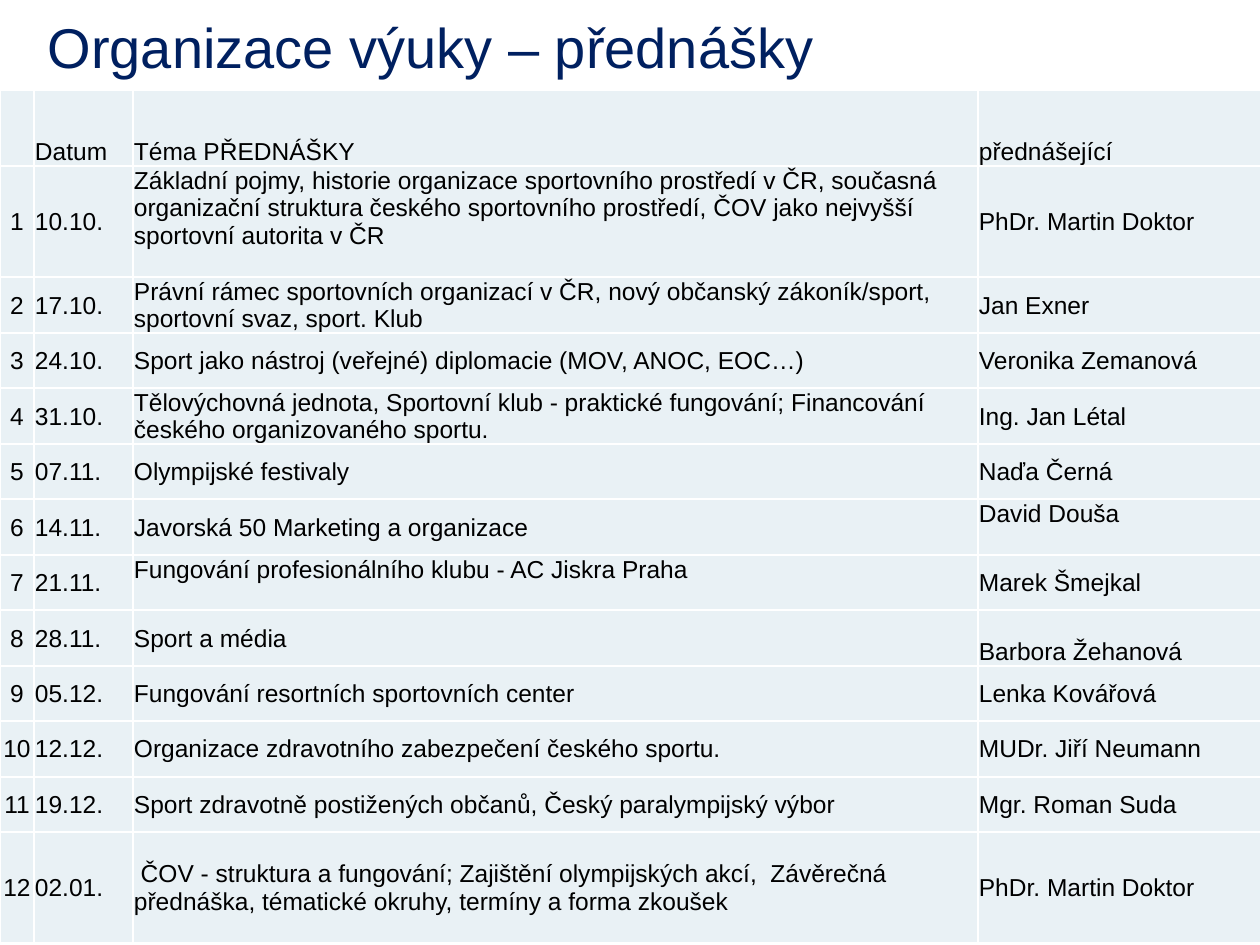
import pptx
import pptx.dml.color
import pptx.enum.text
import pptx.oxml
import pptx.oxml.ns
import pptx.util

PX = 914400 // 126
ANCHOR = pptx.enum.text.MSO_ANCHOR
ALIGN = pptx.enum.text.PP_ALIGN

HEADINGS = ["", "Datum", "Téma PŘEDNÁŠKY", "přednášející"]
LECTURES = [
    ("10.10.", "Základní pojmy, historie organizace sportovního prostředí v ČR, současná "
     "organizační struktura českého sportovního prostředí, ČOV jako nejvyšší "
     "sportovní autorita v ČR", "PhDr. Martin Doktor"),
    ("17.10.", "Právní rámec sportovních organizací v ČR, nový občanský zákoník/sport, "
     "sportovní svaz, sport. Klub", "Jan Exner"),
    ("24.10.", "Sport jako nástroj (veřejné) diplomacie (MOV, ANOC, EOC…)", "Veronika Zemanová"),
    ("31.10.", "Tělovýchovná jednota, Sportovní klub - praktické fungování; Financování "
     "českého organizovaného sportu.", "Ing. Jan Létal"),
    ("07.11.", "Olympijské festivaly", "Naďa Černá"),
    ("14.11.", "Javorská 50 Marketing a organizace", "David Douša"),
    ("21.11.", "Fungování profesionálního klubu - AC Jiskra Praha", "Marek Šmejkal"),
    ("28.11.", "Sport a média", "Barbora Žehanová"),
    ("05.12.", "Fungování resortních sportovních center", "Lenka Kovářová"),
    ("12.12.", "Organizace zdravotního zabezpečení českého sportu.", "MUDr. Jiří Neumann"),
    ("19.12.", "Sport zdravotně postižených občanů, Český paralympijský výbor",
     "Mgr. Roman Suda"),
    ("02.01.", " ČOV - struktura a fungování; Zajištění olympijských akcí,  Závěrečná "
     "přednáška, tématické okruhy, termíny a forma zkoušek", "PhDr. Martin Doktor"),
]
COLUMN_WIDTHS = [34, 99, 845, 286]
ROW_HEIGHTS = [76, 111] + [56, 55] * 5 + [111]
# Cells (row, column) that are not centred vertically
ANCHORS = {(0, column): ANCHOR.BOTTOM for column in range(4)} | {
    (1, 2): ANCHOR.TOP, (6, 3): ANCHOR.TOP, (7, 2): ANCHOR.TOP, (8, 3): ANCHOR.BOTTOM}


def rgb(value):
    return pptx.dml.color.RGBColor.from_string(value)


class SlideBuilder:
    """Holds the style and the slide being filled."""
    font_name = "Arial"
    title_color, text_color = "002060", "000000"
    cell_fill, border_color = "E9F1F5", "FFFFFF"

    def __init__(self, slide):
        self.slide = slide

    def format_paragraph(self, paragraph, size, color, align):
        paragraph.alignment = align
        paragraph.font.name = self.font_name
        paragraph.font.size = pptx.util.Pt(size)
        paragraph.font.color.rgb = rgb(color)

    def title(self, text, left, top, width, height):
        title = self.slide.shapes.title
        title.left, title.top, title.width, title.height = (
            n * PX for n in (left, top, width, height))
        title.text_frame.text = text
        title.text_frame.vertical_anchor = ANCHOR.MIDDLE
        self.format_paragraph(title.text_frame.paragraphs[0], 32, self.title_color, ALIGN.LEFT)

    def table(self, rows, left, top, widths, heights, anchors):
        table = self.slide.shapes.add_table(
            len(rows), len(widths), left * PX, top * PX,
            sum(widths) * PX, sum(heights) * PX).table
        table.first_row = table.horz_banding = False
        for column, width in zip(table.columns, widths):
            column.width = width * PX
        for r, (row, height) in enumerate(zip(rows, heights)):
            table.rows[r].height = height * PX
            for c, text in enumerate(row):
                self.cell(table.cell(r, c), text, anchors.get((r, c), ANCHOR.MIDDLE),
                          ALIGN.LEFT if c else ALIGN.CENTER)

    def cell(self, cell, text, anchor, align):
        cell.text = text
        cell.vertical_anchor = anchor
        cell.margin_left = cell.margin_right = cell.margin_top = PX
        cell.margin_bottom = 0
        self.format_paragraph(cell.text_frame.paragraphs[0], 14, self.text_color, align)
        self.borders(cell)
        cell.fill.solid()
        cell.fill.fore_color.rgb = rgb(self.cell_fill)

    def borders(self, cell):
        properties = cell._tc.get_or_add_tcPr()
        for side in ("lnL", "lnR", "lnT", "lnB"):
            properties.append(pptx.oxml.parse_xml(
                f'<a:{side} {pptx.oxml.ns.nsdecls("a")} w="{pptx.util.Pt(1)}"><a:solidFill>'
                f'<a:srgbClr val="{self.border_color}"/></a:solidFill></a:{side}>'))


def main():
    presentation = pptx.Presentation()
    presentation.slide_width = pptx.util.Inches(10)
    presentation.slide_height = pptx.util.Inches(7.5)
    title_only = presentation.slide_layouts[5]
    builder = SlideBuilder(presentation.slides.add_slide(title_only))
    builder.title("Organizace výuky – přednášky", 35, -2, 1134, 97)
    numbered = [(str(n), *lecture) for n, lecture in enumerate(LECTURES, 1)]
    builder.table([HEADINGS] + numbered, 0, 90, COLUMN_WIDTHS, ROW_HEIGHTS, ANCHORS)
    presentation.save("out.pptx")


if __name__ == "__main__":
    main()
